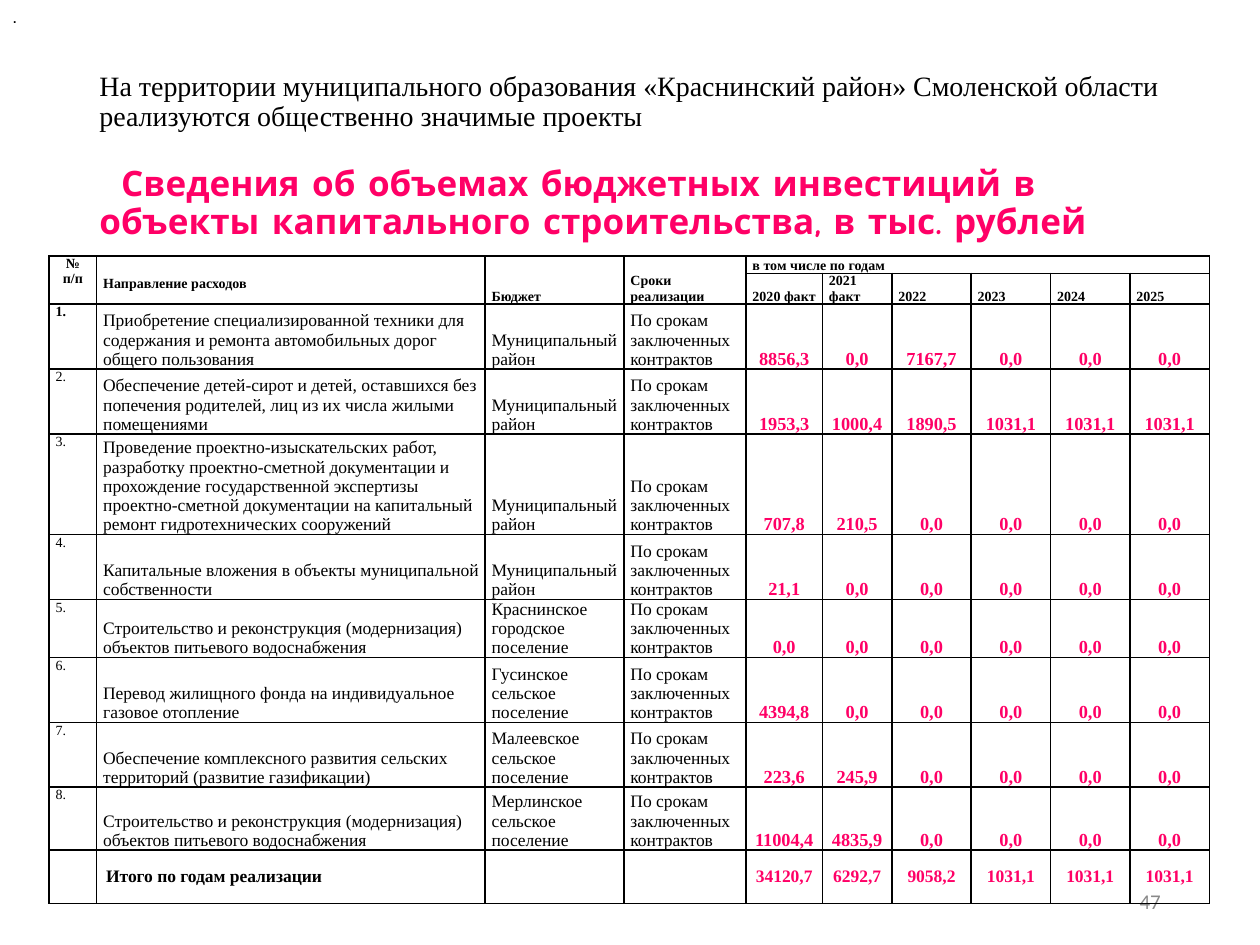
import pptx
import pptx.util
import pptx.dml.color
import pptx.enum.text
import pptx.oxml
import pptx.oxml.ns

Cm = pptx.util.Cm
Pt = pptx.util.Pt
ALIGN = pptx.enum.text.PP_ALIGN
ANCHOR = pptx.enum.text.MSO_ANCHOR
BLACK = pptx.dml.color.RGBColor(0x00, 0x00, 0x00)
PINK = pptx.dml.color.RGBColor(0xFF, 0x00, 0x66)
GRAY = pptx.dml.color.RGBColor(0x89, 0x89, 0x89)
SERIF = "Times New Roman"


def add_run(para, text, size, color, bold=False, font=SERIF):
    span = para.add_run()
    span.text = text
    span.font.size = Pt(size)
    span.font.name = font
    span.font.bold = bold
    span.font.color.rgb = color


def fill_cell(cell, text, size, color=BLACK, bold=False, align=ALIGN.LEFT,
              anchor=ANCHOR.BOTTOM, side=0.13, bottom=0):
    cell.margin_left = cell.margin_right = Cm(side)
    cell.margin_top = 0
    cell.margin_bottom = Cm(bottom)
    cell.vertical_anchor = anchor
    for index, line in enumerate(text.split("\n")):
        frame = cell.text_frame
        para = frame.add_paragraph() if index else frame.paragraphs[0]
        para.alignment = align
        para.line_spacing = Pt(size * 1.1)
        add_run(para, line, size, color, bold)


deck = pptx.Presentation()
deck.slide_width = Cm(25.4)
deck.slide_height = Cm(19.05)
slide = deck.slides.add_slide(deck.slide_layouts[5])

title = slide.shapes.title
title.left, title.top, title.width, title.height = Cm(1.75), Cm(1.02), Cm(21.9), Cm(4.55)
frame = title.text_frame
frame.word_wrap = True
frame.auto_size = pptx.enum.text.MSO_AUTO_SIZE.NONE
frame.vertical_anchor = ANCHOR.TOP
frame.margin_top = Cm(0.44)
intro = frame.paragraphs[0]
add_run(intro, "На территории муниципального образования «Краснинский район» Смоленской области "
        "реализуются общественно значимые проекты", 16, BLACK)
heading = frame.add_paragraph()
heading.space_before = Pt(19)
heading._p.get_or_add_pPr().set("indent", str(Cm(0.44)))
add_run(heading, "Сведения об объемах бюджетных инвестиций в объекты капитального "
        "строительства, в тыс. рублей", 20, PINK, True, "Comic Neue")
for para in frame.paragraphs:
    para.alignment = ALIGN.LEFT
    para.line_spacing = 0.9

number_box = slide.shapes.add_textbox(Cm(17.93), Cm(17.65), Cm(5.72), Cm(1.02))
number_box.text_frame.word_wrap = True
number_box.text_frame.vertical_anchor = ANCHOR.MIDDLE
para = number_box.text_frame.paragraphs[0]
para.alignment = ALIGN.RIGHT
add_run(para, "47", 12, GRAY, font="Calibri")

widths = [0.96, 7.83, 2.8, 2.46, 1.54, 1.4] + [1.6] * 4
heights = [0.35, 0.62, 1.31, 1.31, 2.03, 1.31, 1.17, 1.31, 1.3, 1.27, 1.07]
DISTRICT = "Муниципальный район"
TERMS = "По срокам заключенных контрактов"
WATER = "Строительство и реконструкция (модернизация) объектов питьевого водоснабжения"
years = ["2020 факт", "2021\nфакт", "2022", "2023", "2024", "2025"]
projects = [
    ("Приобретение специализированной техники для содержания и ремонта автомобильных дорог "
     "общего пользования", DISTRICT, "8856,3 0,0 7167,7 0,0 0,0 0,0"),
    ("Обеспечение детей-сирот и детей, оставшихся без попечения родителей, лиц из их числа "
     "жилыми помещениями", DISTRICT, "1953,3 1000,4 1890,5 1031,1 1031,1 1031,1"),
    ("Проведение проектно-изыскательских работ, разработку проектно-сметной документации и "
     "прохождение государственной экспертизы проектно-сметной документации на капитальный "
     "ремонт гидротехнических сооружений", DISTRICT, "707,8 210,5 0,0 0,0 0,0 0,0"),
    ("Капитальные вложения в объекты муниципальной собственности", DISTRICT,
     "21,1 0,0 0,0 0,0 0,0 0,0"),
    (WATER, "Краснинское городское поселение", "0,0 0,0 0,0 0,0 0,0 0,0"),
    ("Перевод жилищного фонда на индивидуальное газовое отопление",
     "Гусинское сельское поселение", "4394,8 0,0 0,0 0,0 0,0 0,0"),
    ("Обеспечение комплексного развития сельских территорий (развитие газификации)",
     "Малеевское сельское поселение", "223,6 245,9 0,0 0,0 0,0 0,0"),
    (WATER, "Мерлинское сельское поселение", "11004,4 4835,9 0,0 0,0 0,0 0,0"),
]
totals = "34120,7 6292,7 9058,2 1031,1 1031,1 1031,1"

table = slide.shapes.add_table(len(heights), len(widths), Cm(0.99), Cm(5.16),
                               Cm(sum(widths)), Cm(sum(heights))).table
table.first_row = False
table.horz_banding = False
for column, width in zip(table.columns, widths):
    column.width = Cm(width)
for row, height in zip(table.rows, heights):
    row.height = Cm(height)

for cell in table.iter_cells():
    properties = cell._tc.get_or_add_tcPr()
    for edge in ("lnL", "lnR", "lnT", "lnB"):
        properties.append(pptx.oxml.parse_xml(
            f'<a:{edge} {pptx.oxml.ns.nsdecls("a")} w="12700"><a:solidFill>'
            f'<a:srgbClr val="{BLACK}"/></a:solidFill></a:{edge}>'))
    cell.fill.background()

for column in range(4):
    table.cell(0, column).merge(table.cell(1, column))
table.cell(0, 4).merge(table.cell(0, 9))
fill_cell(table.cell(0, 0), "№ п/п", 8, bold=True, align=ALIGN.CENTER, anchor=ANCHOR.TOP)
fill_cell(table.cell(0, 1), "Направление расходов", 8, bold=True, bottom=0.25)
fill_cell(table.cell(0, 2), "Бюджет", 8, bold=True)
fill_cell(table.cell(0, 3), "Сроки реализации", 8, bold=True)
fill_cell(table.cell(0, 4), "в том числе по годам", 8, bold=True)
for column, year in enumerate(years, 4):
    fill_cell(table.cell(1, column), year, 8, bold=True)

for number, (purpose, budget, amounts) in enumerate(projects, 1):
    row = number + 1
    fill_cell(table.cell(row, 0), f"{number}.", 8, bold=number == 1, anchor=ANCHOR.TOP)
    for column, text in enumerate((purpose, budget, TERMS), 1):
        fill_cell(table.cell(row, column), text, 10)
    for column, amount in enumerate(amounts.split(), 4):
        fill_cell(table.cell(row, column), amount, 10.5, PINK, True, ALIGN.CENTER)

fill_cell(table.cell(10, 1), "Итого по годам реализации", 10, bold=True,
          anchor=ANCHOR.MIDDLE, side=0.19)
for column, total in enumerate(totals.split(), 4):
    fill_cell(table.cell(10, column), total, 10, PINK, True, ALIGN.CENTER, ANCHOR.MIDDLE, 0.1)

dot_box = slide.shapes.add_textbox(0, 0, Cm(0.61), Cm(1.45))
dot_box.text_frame.word_wrap = False
add_run(dot_box.text_frame.paragraphs[0], ".", 10, BLACK, font="Arial")

deck.save("out.pptx")
